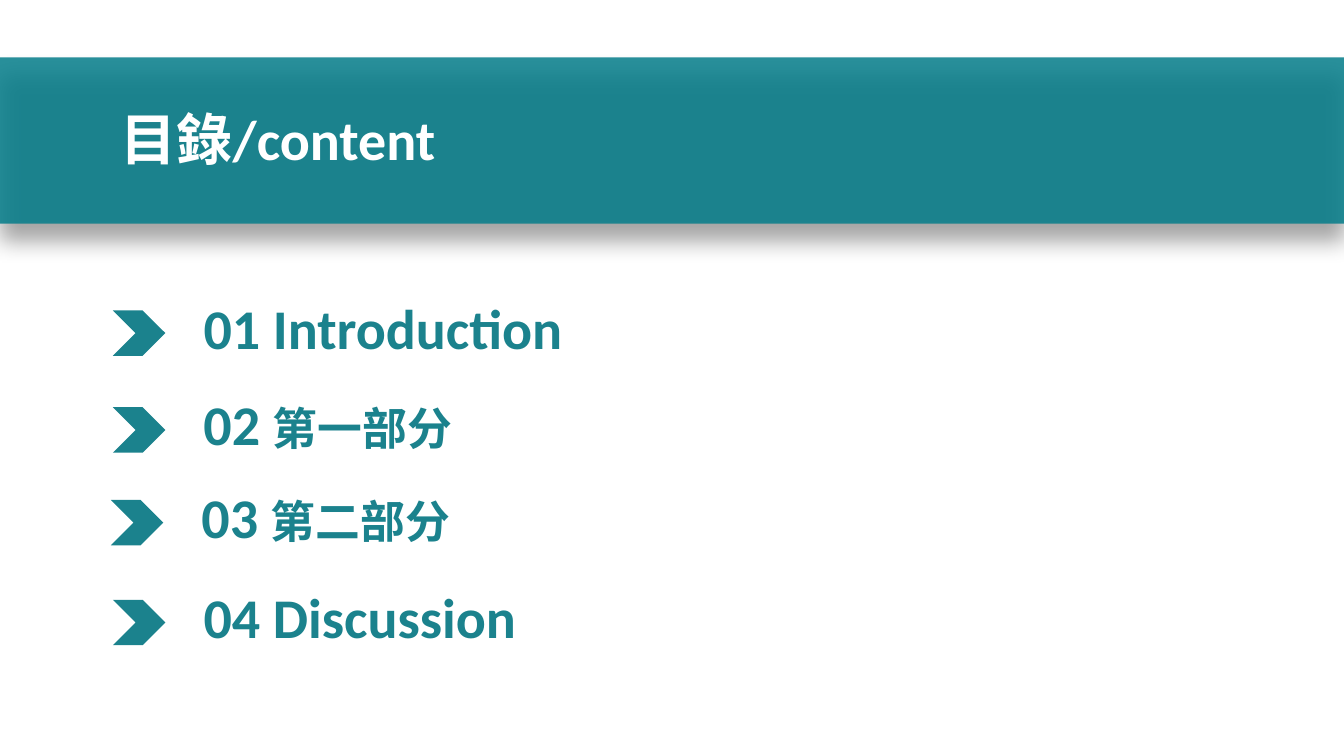
from lxml import etree
from pptx import Presentation
from pptx.dml.color import RGBColor
from pptx.enum.shapes import MSO_SHAPE
from pptx.enum.text import MSO_AUTO_SIZE, PP_ALIGN
from pptx.oxml.ns import qn
from pptx.util import Inches, Pt

RECTANGLE = MSO_SHAPE.RECTANGLE
CHEVRON = MSO_SHAPE.CHEVRON
FIT_SHAPE = MSO_AUTO_SIZE.SHAPE_TO_FIT_TEXT
LEFT = PP_ALIGN.LEFT
JUSTIFY = PP_ALIGN.JUSTIFY

BAND_TEAL = RGBColor(0x04, 0x7D, 0x8A)
TEAL = RGBColor(0x1B, 0x82, 0x8D)
WHITE = RGBColor(0xFF, 0xFF, 0xFF)
BLACK = RGBColor(0x00, 0x00, 0x00)

FONT = "Calibri"
LARGE, SMALL = 40, 32
LINE_HEIGHT = 0.77

# left, top, width of the text, and the (words, size) runs of each entry
ENTRIES = [
    (1.12, 3.08, 5.01, [("01 Introduction", LARGE)]),
    (1.12, 4.04, 5.47, [("02 ", LARGE), ("第一部分", SMALL)]),
    (1.10, 4.96, 5.25, [("03 ", LARGE), ("第二部分", SMALL)]),
    (1.12, 5.95, 4.75, [("04 Discussion", LARGE)]),
]


def add_filled_shape(slide, preset, left, top, width, height, color):
    shape = slide.shapes.add_shape(
        preset, Inches(left), Inches(top), Inches(width), Inches(height))
    shape.shadow.inherit = False
    shape.fill.solid()
    shape.fill.fore_color.rgb = color
    shape.line.fill.background()
    return shape


def add_heading(slide, left, top, width, pieces, color, align=LEFT):
    """Place one bold line made of (words, size) pieces."""
    box = slide.shapes.add_textbox(
        Inches(left), Inches(top), Inches(width), Inches(LINE_HEIGHT))
    frame = box.text_frame
    frame.word_wrap = True
    frame.auto_size = FIT_SHAPE
    paragraph = frame.paragraphs[0]
    paragraph.alignment = align
    for words, size in pieces:
        run = paragraph.add_run()
        run.text = words
        run.font.name = FONT
        run.font.size = Pt(size)
        run.font.bold = True
        run.font.color.rgb = color


def set_opacity(color_element, percent):
    alpha = etree.SubElement(color_element, qn("a:alpha"))
    alpha.set("val", str(percent * 1000))


def add_drop_shadow(shape, opacity, blur, distance):
    """Cast a black shadow straight down; blur and distance in points."""
    effects = shape.element.spPr.find(qn("a:effectLst"))
    shadow = etree.SubElement(effects, qn("a:outerShdw"), {
        "blurRad": str(Pt(blur)), "dist": str(Pt(distance)),
        "dir": str(90 * 60000), "algn": "t", "rotWithShape": "0"})
    color = etree.SubElement(shadow, qn("a:srgbClr"), val=str(BLACK))
    set_opacity(color, opacity)


def add_title_band(slide, left, top, width, height):
    band = add_filled_shape(slide, RECTANGLE, left, top, width, height, BAND_TEAL)
    set_opacity(band.element.spPr.find(qn("a:solidFill"))[0], 85)
    add_drop_shadow(band, opacity=42, blur=16, distance=12)
    add_heading(slide, left + 1.1, top + 0.42, 5.02,
                [("目錄/content", LARGE)], WHITE, JUSTIFY)


def add_entry(slide, left, top, text_width, pieces):
    add_filled_shape(slide, CHEVRON, left, top, 0.52, 0.45, TEAL)
    add_heading(slide, left + 0.8, top - 0.22, text_width, pieces, TEAL)


def main():
    presentation = Presentation()
    presentation.slide_width = Inches(13.33)
    presentation.slide_height = Inches(7.5)
    slide = presentation.slides.add_slide(presentation.slide_layouts[6])
    add_title_band(slide, 0, 0.57, 13.33, 1.65)
    for entry in ENTRIES:
        add_entry(slide, *entry)
    presentation.save("out.pptx")


if __name__ == "__main__":
    main()
